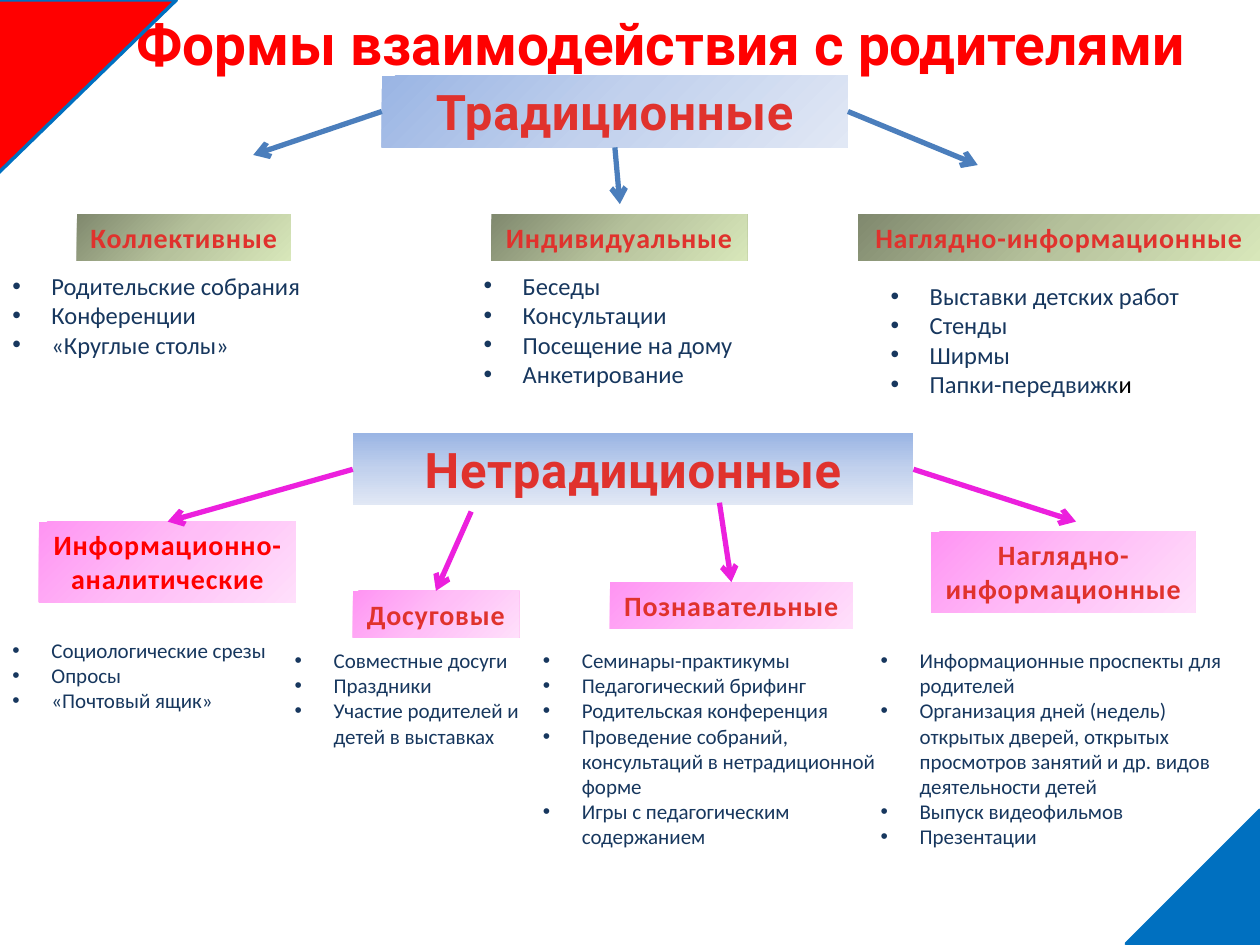
from copy import deepcopy
from dataclasses import dataclass
from typing import NamedTuple, Optional, Union

from lxml import etree
from pptx import Presentation
from pptx import util as u
from pptx.dml.color import RGBColor
from pptx.enum import shapes, text
from pptx.oxml.ns import qn

COLORS = {
    "red": "FF0000", "blue": "0070C0", "navy": "17375E", "black": "000000",
    "outline": "467AB8", "steel": "4B7EBC", "magenta": "EC20DD",
}
GRADIENTS = {
    "sky": ("9AB5E4", "C2D1ED", "E1E8F5"),
    "olive": ("80896E", "B6C29C", "D8E7BA"),
    "pink": ("FF94F3", "FFBEF7", "FFDFFB"),
    "brick": ("E0322D", "A2201C"),
}
HEADING, BODY = "Roboto", "Calibri"
TOP, LEFT, BOTTOM, RIGHT = range(4)
COLUMNS = 100  # square cells, so the slide is 100 columns by 75 rows

deck = Presentation()
deck.slide_width, deck.slide_height = u.Inches(10), u.Inches(7.5)
CELL = deck.slide_width / COLUMNS


class Area(NamedTuple):
    column: float
    row: float
    width: float
    height: float


class Joint(NamedTuple):
    label: str
    side: int


class Spot(NamedTuple):
    column: float
    row: float


@dataclass
class Label:
    lines: tuple[str, ...]
    area: Area
    gradient: str
    size: float = 16
    font: str = BODY
    angle: int = 45
    color: Optional[str] = None
    wrap: bool = False


@dataclass
class Bullets:
    area: Area
    size: float
    items: tuple[str, ...]
    black_tail: int = 0  # closing letters of the last item set in black


@dataclass
class Arrow:
    start: Union[Joint, Spot]
    end: Union[Joint, Spot]
    color: str


LABELS = {
    "traditional": Label(("Традиционные",), Area(30.3, 6, 37, 5.7), "sky", 28, HEADING, wrap=True),
    "modern": Label(("Нетрадиционные",), Area(28, 34.4, 44.5, 5.7), "sky", 28, HEADING, 90, wrap=True),
    "collective": Label(("Коллективные",), Area(6.1, 17, 17, 3.7), "olive"),
    "individual": Label(("Индивидуальные",), Area(39, 17, 20.3, 3.7), "olive"),
    "visual": Label(("Наглядно-информационные",), Area(68.1, 17, 31.9, 3.7), "olive", wrap=True),
    "analytic": Label(("Информационно-", "аналитические"), Area(3.1, 41.4, 20.4, 6.4), "pink", color="red"),
    "leisure": Label(("Досуговые",), Area(28, 46.9, 13.2, 3.7), "pink"),
    "cognitive": Label(("Познавательные",), Area(48.4, 46.2, 19.3, 3.7), "pink"),
    "display": Label(("Наглядно-", "информационные"), Area(73.9, 42.2, 21, 6.4), "pink"),
}
LISTS = [
    Bullets(Area(0, 21, 28.7, 8.1), 14,
            ("Родительские собрания", "Конференции", "«Круглые столы»")),
    Bullets(Area(37.4, 21, 25.2, 10.4), 14,
            ("Беседы", "Консультации", "Посещение на дому", "Анкетирование")),
    Bullets(Area(69.7, 21.8, 26.8, 10.4), 14,
            ("Выставки детских работ", "Стенды", "Ширмы", "Папки-передвижки"), black_tail=1),
    Bullets(Area(0, 50.1, 24.8, 7.1), 12,
            ("Социологические срезы", "Опросы", "«Почтовый ящик»")),
    Bullets(Area(22.4, 50.9, 21.3, 9.1), 12,
            ("Совместные досуги", "Праздники", "Участие родителей и детей в выставках")),
    Bullets(Area(42.1, 50.9, 29.1, 19.2), 12,
            ("Семинары-практикумы", "Педагогический брифинг", "Родительская конференция",
             "Проведение собраний, консультаций в нетрадиционной форме",
             "Игры с педагогическим содержанием")),
    Bullets(Area(68.9, 50.9, 31.1, 17.2), 12,
            ("Информационные проспекты для родителей",
             "Организация дней (недель) открытых дверей, открытых просмотров занятий "
             "и др. видов деятельности детей",
             "Выпуск видеофильмов", "Презентации")),
]
ARROWS = [
    Arrow(Joint("traditional", LEFT), Spot(20.1, 12.3), "steel"),
    Arrow(Joint("traditional", RIGHT), Spot(77.6, 13.1), "steel"),
    Arrow(Joint("traditional", BOTTOM), Spot(49.2, 16.2), "steel"),
    Arrow(Joint("modern", LEFT), Joint("analytic", TOP), "magenta"),
    Arrow(Joint("modern", RIGHT), Spot(85.4, 41.4), "magenta"),
    Arrow(Spot(37.4, 40.6), Joint("leisure", TOP), "magenta"),
    Arrow(Spot(57.1, 39.9), Joint("cognitive", TOP), "magenta"),
]


def cells(*counts: float) -> list[int]:
    return [round(count * CELL) for count in counts]


def rgb(name: str) -> RGBColor:
    return RGBColor.from_string(COLORS[name])


def paint_gradient(fill, owner, name: str, angle: int, first: float = 0) -> None:
    """Spread the stops evenly from first to 1; angle runs clockwise."""
    fill.gradient()
    hexes = GRADIENTS[name]
    stop_list = owner.find(".//" + qn("a:gsLst"))
    while len(stop_list) < len(hexes):
        stop_list.append(deepcopy(stop_list[-1]))
    for index, (stop, code) in enumerate(zip(fill.gradient_stops, hexes)):
        stop.color.rgb = RGBColor.from_string(code)
        stop.position = first + (1 - first) * index / (len(hexes) - 1)
    fill.gradient_angle = (360 - angle) % 360


def add_span(para, words: str, font: str, size: float, color: Optional[str], bold: bool = False):
    span = para.add_run()
    span.text = words
    span.font.name, span.font.size, span.font.bold = font, u.Pt(size), bold
    if color:
        span.font.fill.solid()
        span.font.fill.fore_color.rgb = rgb(color)
    return span


def add_corner(page, area: Area, color: str, flip: str) -> None:
    corner = page.shapes.add_shape(shapes.MSO_SHAPE.RIGHT_TRIANGLE, *cells(*area))
    corner.shadow.inherit = False
    corner.fill.solid()
    corner.fill.fore_color.rgb = rgb(color)
    corner.line.color.rgb = rgb("blue")
    corner.line.width = u.Pt(2)
    corner.element.spPr.find(qn("a:xfrm")).set(flip, "1")


def add_label(page, label: Label):
    box = page.shapes.add_shape(shapes.MSO_SHAPE.RECTANGLE, *cells(*label.area))
    box.shadow.inherit = False
    box.line.fill.background()
    paint_gradient(box.fill, box.element.spPr, label.gradient, label.angle)
    frame = box.text_frame
    frame.word_wrap = label.wrap
    frame.auto_size = text.MSO_AUTO_SIZE.SHAPE_TO_FIT_TEXT
    frame.vertical_anchor = text.MSO_ANCHOR.TOP
    for index, line in enumerate(label.lines):
        para = frame.add_paragraph() if index else frame.paragraphs[0]
        para.alignment = text.PP_ALIGN.CENTER
        span = add_span(para, line, label.font, label.size, label.color, bold=True)
        properties = span._r.get_or_add_rPr()
        properties.set("spc", "50")
        if not label.color:
            paint_gradient(span.font.fill, properties, "brick", 90, first=0.25)
    return box


def add_bullets(page, bullets: Bullets) -> None:
    frame = page.shapes.add_textbox(*cells(*bullets.area)).text_frame
    frame.word_wrap = True
    frame.auto_size = text.MSO_AUTO_SIZE.SHAPE_TO_FIT_TEXT
    for index, item in enumerate(bullets.items):
        para = frame.add_paragraph() if index else frame.paragraphs[0]
        properties = para._p.get_or_add_pPr()
        indent = u.Inches(0.31)
        properties.set("marL", str(indent))
        properties.set("indent", str(-indent))
        etree.SubElement(properties, qn("a:buFont"), typeface="Arial")
        etree.SubElement(properties, qn("a:buChar"), char="•")
        tail = bullets.black_tail if item == bullets.items[-1] else 0
        cut = len(item) - tail
        add_span(para, item[:cut], BODY, bullets.size, "navy")
        if tail:
            add_span(para, item[cut:], BODY, bullets.size, "black")


def add_arrow(page, arrow: Arrow, boxes: dict) -> None:
    ends = [cells(*end) if isinstance(end, Spot) else (0, 0) for end in (arrow.start, arrow.end)]
    line = page.shapes.add_connector(shapes.MSO_CONNECTOR.STRAIGHT, *ends[0], *ends[1])
    for end, connect in ((arrow.start, line.begin_connect), (arrow.end, line.end_connect)):
        if isinstance(end, Joint):
            connect(boxes[end.label], end.side)
    line.line.color.rgb = rgb(arrow.color)
    line.line.width = u.Pt(3)
    etree.SubElement(line.line._get_or_add_ln(), qn("a:tailEnd"), type="arrow")
    etree.SubElement(line.element.spPr, qn("a:effectLst"))


def set_title(page) -> None:
    title = page.shapes.title
    title.left, title.top, title.width, title.height = cells(9.8, 0, 85.3, 12.5)
    frame = title.text_frame
    frame.vertical_anchor = text.MSO_ANCHOR.TOP
    frame.margin_top = u.Inches(0.07)
    para = frame.paragraphs[0]
    para.alignment = text.PP_ALIGN.CENTER
    span = add_span(para, "Формы взаимодействия с родителями", HEADING, 32.4, "red", bold=True)
    outline = etree.Element(qn("a:ln"), w=str(u.Pt(0.83)))
    fill = etree.SubElement(outline, qn("a:solidFill"))
    etree.SubElement(fill, qn("a:srgbClr"), val=COLORS["outline"])
    span._r.get_or_add_rPr().insert(0, outline)


def main() -> None:
    page = deck.slides.add_slide(deck.slide_layouts[5])
    set_title(page)
    add_corner(page, Area(89.4, 64.3, 10.6, 10.6), "blue", "flipH")
    boxes = {name: add_label(page, label) for name, label in LABELS.items()}
    for bullets in LISTS:
        add_bullets(page, bullets)
    add_corner(page, Area(-0.2, 0, 14.2, 13.8), "red", "flipV")
    for arrow in ARROWS:
        add_arrow(page, arrow, boxes)
    deck.save("out.pptx")


if __name__ == "__main__":
    main()
